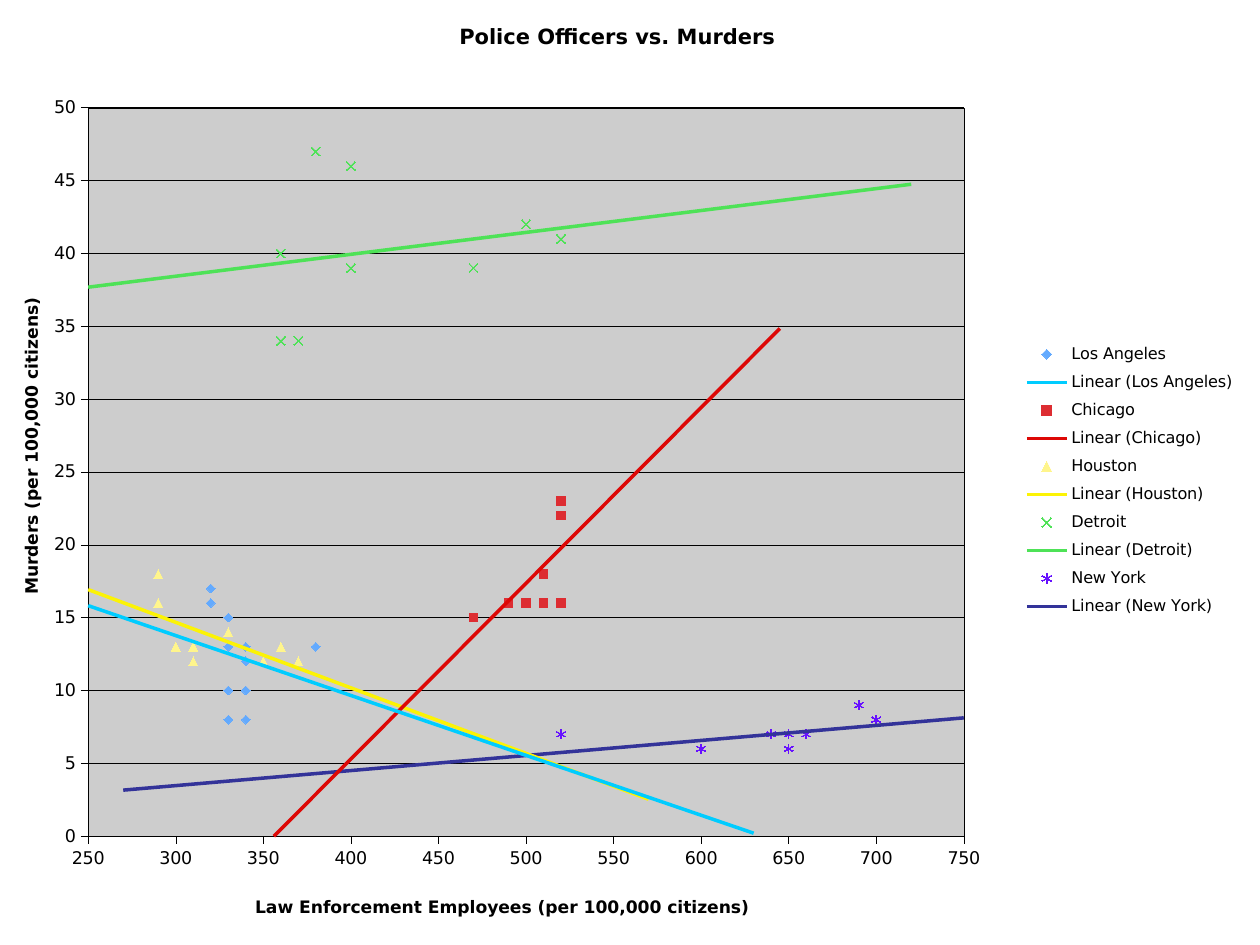
"""Scatter chart of police officers against murders in five cities."""
from dataclasses import dataclass

from lxml.etree import fromstring
from pptx import Presentation
from pptx.chart.data import XyChartData
from pptx.dml.color import RGBColor
from pptx.enum.chart import XL_CHART_TYPE, XL_LEGEND_POSITION, XL_MARKER_STYLE, XL_TICK_MARK
from pptx.oxml.ns import qn
from pptx.util import Inches, Pt

NS = ('xmlns:c="http://schemas.openxmlformats.org/drawingml/2006/chart" '
      'xmlns:a="http://schemas.openxmlformats.org/drawingml/2006/main"')


@dataclass(frozen=True)
class Theme:
    font: str = "DejaVu Sans"
    ink: str = "000000"
    plot: str = "CDCDCD"
    title: float = 12
    axis_title: float = 9.8
    tick: float = 10
    legend: float = 9.2
    hairline: float = 0.25
    trend: float = 2
    marker: int = 5


@dataclass(frozen=True)
class City:
    name: str
    marker: XL_MARKER_STYLE
    color: str
    trend: str
    backward: int
    forward: int
    officers: tuple
    murders: tuple
    filled: bool = True


CITIES = (
    City("Los Angeles", XL_MARKER_STYLE.DIAMOND, "63AAFE", "00CCFF", 250, 250,
         (330, 320, 320, 380, 340, 330, 340, 330, 340, 340, 330),
         (15, 16, 17, 13, 13, 13, 12, 10, 10, 8, 8)),
    City("Chicago", XL_MARKER_STYLE.SQUARE, "DD2D32", "DD0806", 125, 125,
         (520, 520, 520, 520, 500, 510, 520, 520, 510, 490, 470),
         (22, 23, 22, 23, 16, 16, 16, 16, 18, 16, 15)),
    City("Houston", XL_MARKER_STYLE.TRIANGLE, "FFF58C", "FCF305", 200, 200,
         (370, 360, 350, 330, 310, 290, 290, 290, 300, 310, 310),
         (12, 13, 12, 14, 13, 16, 18, 16, 13, 13, 12)),
    City("Detroit", XL_MARKER_STYLE.X, "4EE257", "4EE257", 200, 200,
         (520, 520, 500, 470, 500, 400, 380, 400, 370, 360, 360),
         (41, 41, 42, 39, 42, 39, 47, 46, 34, 40, 34), False),
    City("New York", XL_MARKER_STYLE.STAR, "6711FF", "333399", 250, 50,
         (690, 700, 660, 520, 640, 650, 650, 650, 600, 600, 600),
         (9, 8, 7, 7, 7, 7, 7, 6, 6, 6, 6), False),
)


class Deck:
    """Holds the theme and the current slide; places parts in percent of its size."""

    def __init__(self, prs, theme):
        self.prs, self.theme = prs, theme
        self.s = prs.slides.add_slide(prs.slide_layouts[6])

    def font(self, font, size, bold=False):
        values = {"name": self.theme.font, "size": Pt(size), "bold": bold}
        for key, value in values.items():
            setattr(font, key, value)
        font.color.rgb = RGBColor.from_string(self.theme.ink)

    def line(self, line, color, width):
        line.color.rgb = RGBColor.from_string(color)
        line.width = Pt(width)

    def place(self, element, after, **percents):
        for old in element.findall(qn("c:layout")):
            element.remove(old)
        modes = "".join(f'<c:{k}Mode val="edge"/>' for k in "xy")
        values = "".join(f'<c:{k} val="{v / 100:.4f}"/>' for k, v in percents.items())
        target = '<c:layoutTarget val="inner"/>' if after is None else ""
        layout = fromstring(f"<c:layout {NS}><c:manualLayout>{target}{modes}{values}"
                            "</c:manualLayout></c:layout>")
        if after is None:
            element.insert(0, layout)
        else:
            element.find(qn(after)).addnext(layout)

    def title(self, title, text, size, x, y):
        tf = title.text_frame
        p = tf.paragraphs[0]
        r = p.add_run()
        r.text = text
        self.font(p.font, size, True)
        self.font(r.font, size, True)
        self.place(title._element, "c:tx", x=x, y=y)

    def chart(self, cities):
        data = XyChartData()
        for city in cities:
            series = data.add_series(city.name)
            for x, y in zip(city.officers, city.murders):
                series.add_data_point(x, y)
        chart = self.s.shapes.add_chart(XL_CHART_TYPE.XY_SCATTER, 0, 0, self.prs.slide_width,
                                        self.prs.slide_height, data).chart
        self.font(chart.font, self.theme.tick)
        for city, series in zip(cities, chart.plots[0].series):
            self.series(series, city)
        return chart

    def series(self, series, city):
        series.format.line.fill.background()
        series.marker.style, series.marker.size = city.marker, self.theme.marker
        fmt = series.marker.format
        if city.filled:
            fmt.fill.solid()
            fmt.fill.fore_color.rgb = RGBColor.from_string(city.color)
        else:
            fmt.fill.background()
        self.line(fmt.line, city.color, self.theme.hairline)
        series._element.find(qn("c:xVal")).addprevious(fromstring(
            f'<c:trendline {NS}><c:spPr><a:ln w="{Pt(self.theme.trend)}"><a:solidFill>'
            f'<a:srgbClr val="{city.trend}"/></a:solidFill></a:ln></c:spPr>'
            f'<c:trendlineType val="linear"/><c:forward val="{city.forward}"/>'
            f'<c:backward val="{city.backward}"/><c:dispRSqr val="0"/>'
            '<c:dispEq val="0"/></c:trendline>'))

    def axis(self, axis, text, x, y, low, high, step, grid):
        values = {"minimum_scale": low, "maximum_scale": high, "major_unit": step,
                  "major_tick_mark": XL_TICK_MARK.OUTSIDE, "minor_tick_mark": XL_TICK_MARK.NONE,
                  "has_major_gridlines": grid, "has_title": True}
        for key, value in values.items():
            setattr(axis, key, value)
        self.font(axis.tick_labels.font, self.theme.tick)
        self.line(axis.format.line, self.theme.ink, self.theme.hairline)
        if grid:
            self.line(axis.major_gridlines.format.line, self.theme.ink, self.theme.hairline)
        self.title(axis.axis_title, text, self.theme.axis_title, x, y)

    def plot_area(self, chart, **percents):
        area = chart._chartSpace.chart.plotArea
        self.place(area, None, **percents)
        fill, edge = (f'<a:solidFill><a:srgbClr val="{c}"/></a:solidFill>'
                      for c in (self.theme.plot, self.theme.ink))
        area.append(fromstring(f'<c:spPr {NS}>{fill}<a:ln w="{Pt(self.theme.hairline)}">'
                               f"{edge}</a:ln></c:spPr>"))

    def legend(self, chart, **percents):
        chart.has_legend = True
        legend = chart.legend
        legend.position, legend.include_in_layout = XL_LEGEND_POSITION.RIGHT, False
        self.font(legend.font, self.theme.legend)
        self.place(legend._element, "c:legendPos", **percents)


def main():
    prs = Presentation()
    prs.slide_width, prs.slide_height = Inches(10), Inches(7.5)
    deck = Deck(prs, Theme())
    chart = deck.chart(CITIES)
    chart.has_title = True
    deck.title(chart.chart_title, "Police Officers vs. Murders", deck.theme.title, 36.15, 1.95)
    deck.axis(chart.category_axis, "Law Enforcement Employees (per 100,000 citizens)",
              20, 94.4, 250, 750, 50, False)
    deck.axis(chart.value_axis, "Murders (per 100,000 citizens)",
              1.35, 31.2, 0, 50, 5, True)
    deck.plot_area(chart, x=7, y=11.4, w=69.5, h=77.1)
    deck.legend(chart, x=80.65, y=35.5, w=18, h=30.7)
    prs.save("out.pptx")


if __name__ == "__main__":
    main()
